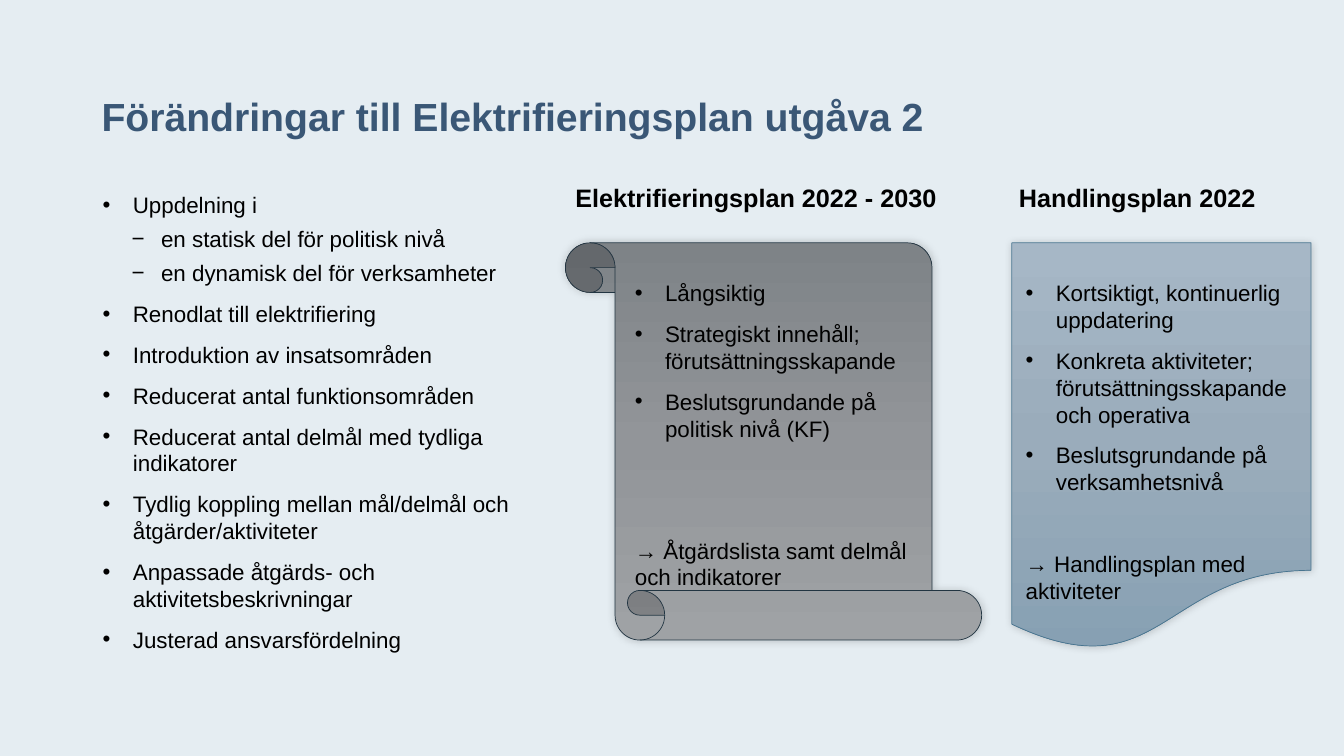
import pptx
import pptx.util
import pptx.dml.color
import pptx.enum.shapes
import pptx.enum.text
import pptx.oxml
import pptx.oxml.ns

Cm = pptx.util.Cm
Pt = pptx.util.Pt
RGBColor = pptx.dml.color.RGBColor
SHAPES = pptx.enum.shapes.MSO_SHAPE
ANCHORS = pptx.enum.text.MSO_ANCHOR
qn = pptx.oxml.ns.qn

BACKGROUND = RGBColor(0xE5, 0xED, 0xF2)
TITLE_BLUE = RGBColor(0x3A, 0x57, 0x76)
BLACK = RGBColor(0, 0, 0)
PLAN_LINE = RGBColor(0x22, 0x35, 0x42)
PLAN_FILL = [RGBColor(0x9F, 0xA2, 0xA5), RGBColor(0x92, 0x95, 0x99), RGBColor(0x7E, 0x83, 0x87)]
ACTION_LINE = RGBColor(0x47, 0x74, 0x8F)
ACTION_FILL = [RGBColor(0xA6, 0xB7, 0xC6), RGBColor(0x9A, 0xAC, 0xBB), RGBColor(0x87, 0xA0, 0xB3)]

# bullet, left indent (cm), hanging indent (cm), space before (pt)
LEVELS = [("•", 0.76, 0.76, 10), ("−", 1.47, 0.74, 5)]

CHANGES = [
    ("Uppdelning i", 0),
    ("en statisk del för politisk nivå", 1),
    ("en dynamisk del för verksamheter", 1),
    ("Renodlat till elektrifiering", 0),
    ("Introduktion av insatsområden", 0),
    ("Reducerat antal funktionsområden", 0),
    ("Reducerat antal delmål med tydliga indikatorer", 0),
    ("Tydlig koppling mellan mål/delmål och åtgärder/aktiviteter", 0),
    ("Anpassade åtgärds- och aktivitetsbeskrivningar", 0),
    ("Justerad ansvarsfördelning", 0),
]
PLAN_POINTS = [
    ("Långsiktig", 0),
    ("Strategiskt innehåll; förutsättningsskapande", 0),
    ("Beslutsgrundande på politisk nivå (KF)", 0),
]
ACTION_POINTS = [
    ("Kortsiktigt, kontinuerlig uppdatering", 0),
    ("Konkreta aktiviteter; förutsättningsskapande och operativa", 0),
    ("Beslutsgrundande på verksamhetsnivå", 0),
]


def xml(tag, content="", **attributes):
    """Build a DrawingML element such as a:buChar."""
    pairs = "".join(f' {name}="{value}"' for name, value in attributes.items())
    namespace = pptx.oxml.ns.nsdecls("a")
    return pptx.oxml.parse_xml(f"<a:{tag} {namespace}{pairs}>{content}</a:{tag}>")


def add_paper(slide, form, box, colours, line_colour, flipped=False):
    """Add a sheet with an even vertical gradient and a soft shadow."""
    paper = slide.shapes.add_shape(form, *map(Cm, box))
    paper.fill.gradient()
    paper.fill.gradient_angle = 270
    properties = paper._element.spPr
    stops = properties.find(qn("a:gradFill")).find(qn("a:gsLst"))
    for stop in list(stops):
        stops.remove(stop)
    for index, colour in enumerate(colours):
        position = index * 100000 // (len(colours) - 1)
        stops.append(xml("gs", f'<a:srgbClr val="{colour}"/>', pos=position))
    paper.line.color.rgb = line_colour
    paper.line.width = Pt(0.5)
    paper.shadow.inherit = False
    properties.find(qn("a:effectLst")).append(xml(
        "outerShdw", '<a:srgbClr val="000000"><a:alpha val="20000"/></a:srgbClr>',
        blurRad=Pt(6), dist=0, dir=225 * 60000))
    if flipped:
        properties.find(qn("a:xfrm")).set("flipV", "1")


def add_run(paragraph, text, size, colour=BLACK, bold=False):
    run = paragraph.add_run()
    run.text = text
    run.font.name = "Arial"
    run.font.size = Pt(size)
    run.font.bold = bold
    run.font.color.rgb = colour


def add_frame(slide, box):
    frame = slide.shapes.add_textbox(*map(Cm, box)).text_frame
    frame.word_wrap = True
    return frame


def add_heading(slide, box, text, size=18, colour=BLACK, anchor=ANCHORS.TOP):
    frame = add_frame(slide, box)
    frame.vertical_anchor = anchor
    add_run(frame.paragraphs[0], text, size, colour, bold=True)


def add_points(slide, box, points, result=None, result_gap=0):
    """Add a bulleted list, with an optional unbulleted result line below it."""
    frame = add_frame(slide, box)
    for index, (text, level) in enumerate(points):
        paragraph = frame.add_paragraph() if index else frame.paragraphs[0]
        bullet, indent, hanging, gap = LEVELS[level]
        properties = paragraph._p.get_or_add_pPr()
        properties.set("marL", str(Cm(indent)))
        properties.set("indent", str(-Cm(hanging)))
        properties.append(xml("buFont", typeface="Arial"))
        properties.append(xml("buChar", char=bullet))
        paragraph.level = level
        if index:
            paragraph.space_before = Pt(gap)
        add_run(paragraph, text, 16)
    if result:
        paragraph = frame.add_paragraph()
        paragraph.space_before = Pt(result_gap)
        add_run(paragraph, result, 16)
    for paragraph in frame.paragraphs:
        paragraph.line_spacing = Pt(19.2)


def main():
    presentation = pptx.Presentation()
    presentation.slide_width = Cm(33.87)
    presentation.slide_height = Cm(19.05)
    slide = presentation.slides.add_slide(presentation.slide_layouts[6])
    slide.background.fill.solid()
    slide.background.fill.fore_color.rgb = BACKGROUND

    add_paper(slide, SHAPES.FLOWCHART_DOCUMENT, (25.5, 6.12, 7.54, 10.29),
              ACTION_FILL, ACTION_LINE)
    add_paper(slide, SHAPES.VERTICAL_SCROLL, (14.25, 6.12, 10.49, 10.01),
              PLAN_FILL, PLAN_LINE, flipped=True)

    add_heading(slide, (2.31, 1.04, 29.21, 2.59), "Förändringar till Elektrifieringsplan utgåva 2",
                28, TITLE_BLUE, ANCHORS.BOTTOM)
    add_heading(slide, (14.25, 4.47, 9.7, 1.02), "Elektrifieringsplan 2022 - 2030")
    add_heading(slide, (25.43, 4.47, 6.88, 1.02), "Handlingsplan 2022")

    add_points(slide, (2.34, 4.7, 11.66, 11.13), CHANGES)
    add_points(slide, (15.75, 6.91, 7.62, 8.86), PLAN_POINTS,
               "→ Åtgärdslista samt delmål och indikatorer", 68)
    add_points(slide, (25.6, 6.91, 7.54, 8.1), ACTION_POINTS,
               "→ Handlingsplan med aktiviteter", 39)

    presentation.save("out.pptx")


if __name__ == "__main__":
    main()
